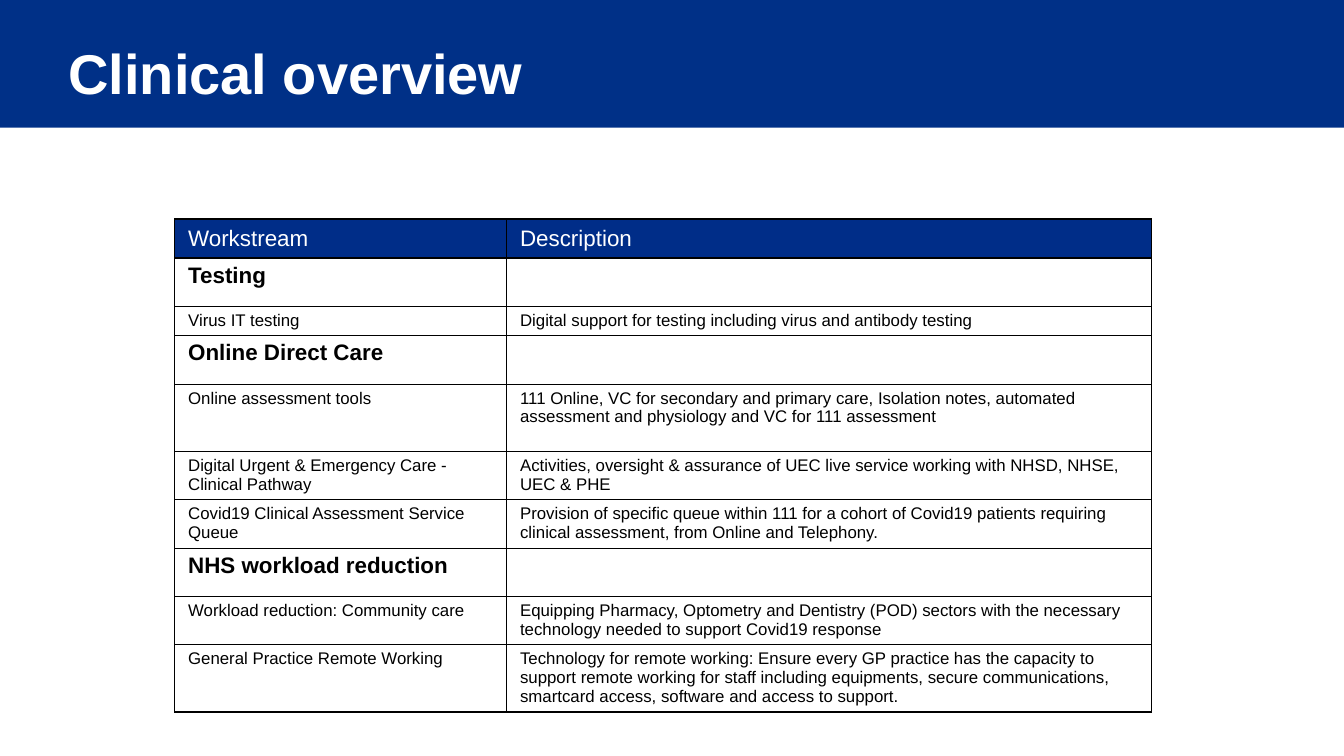
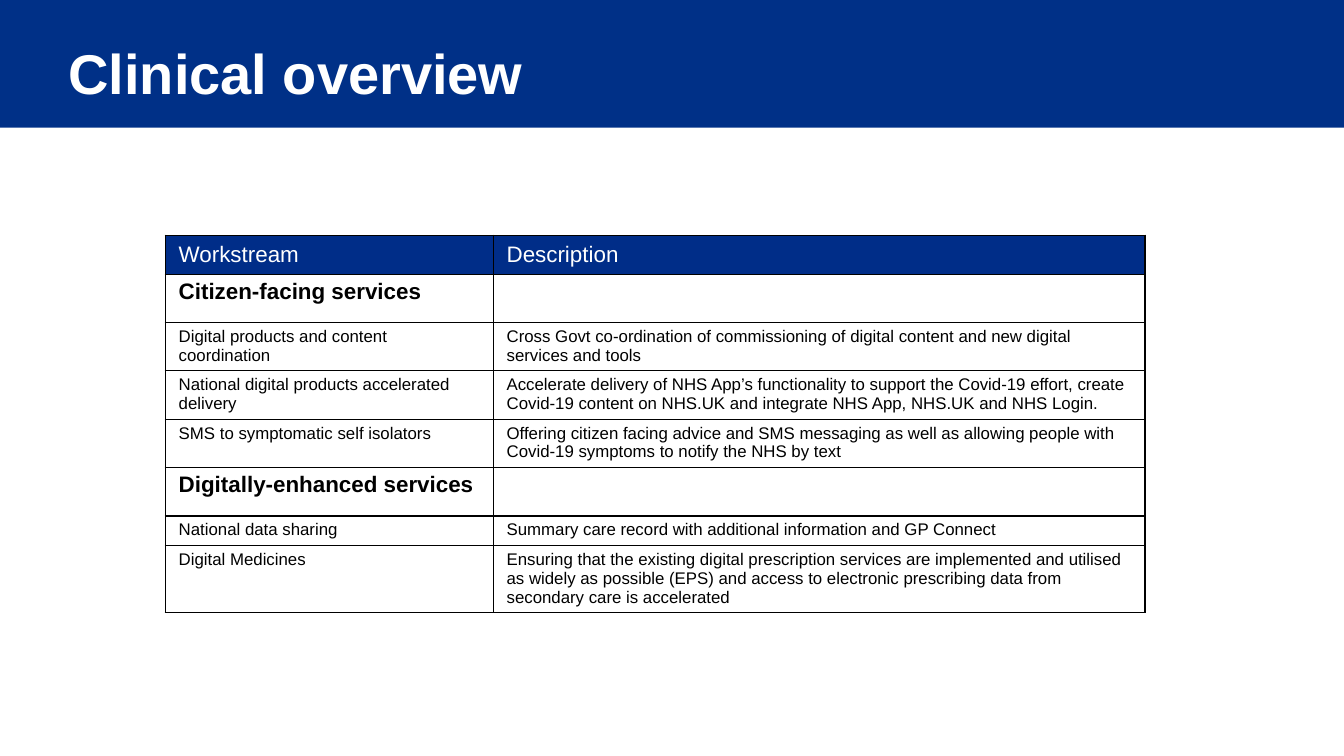
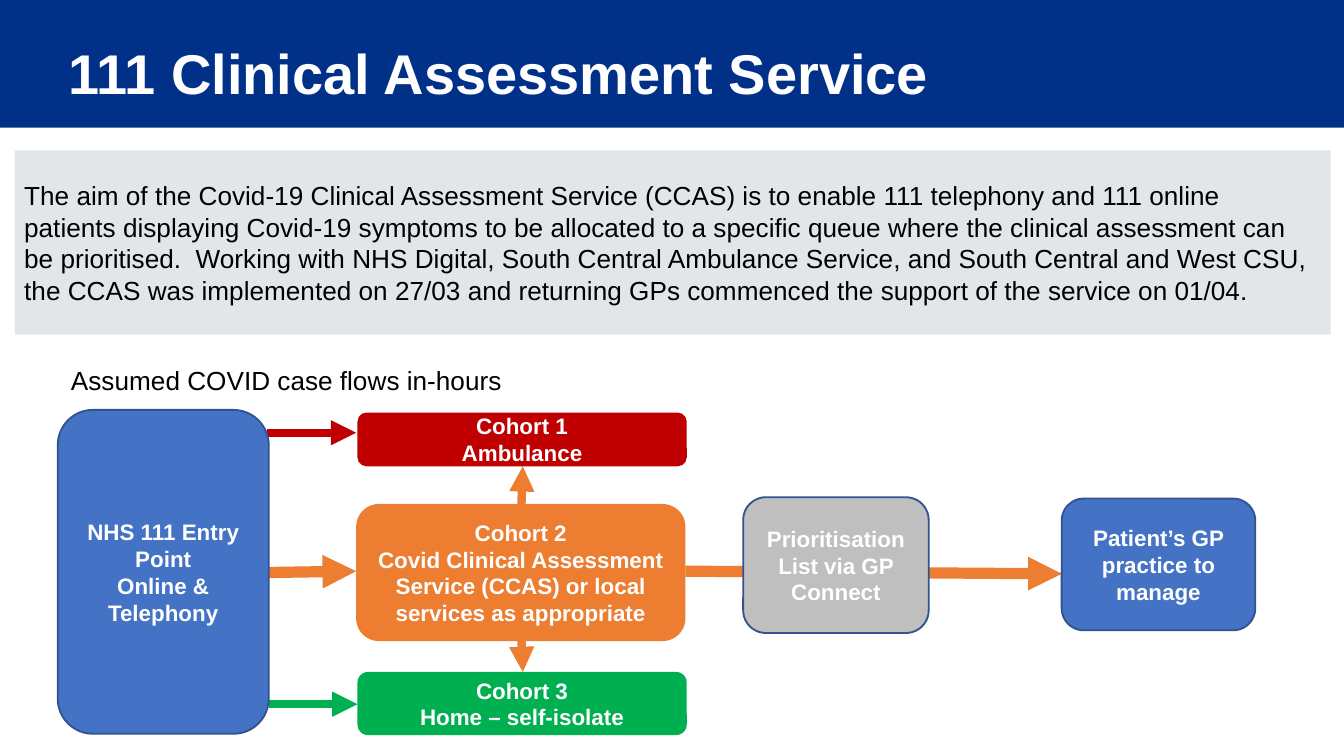
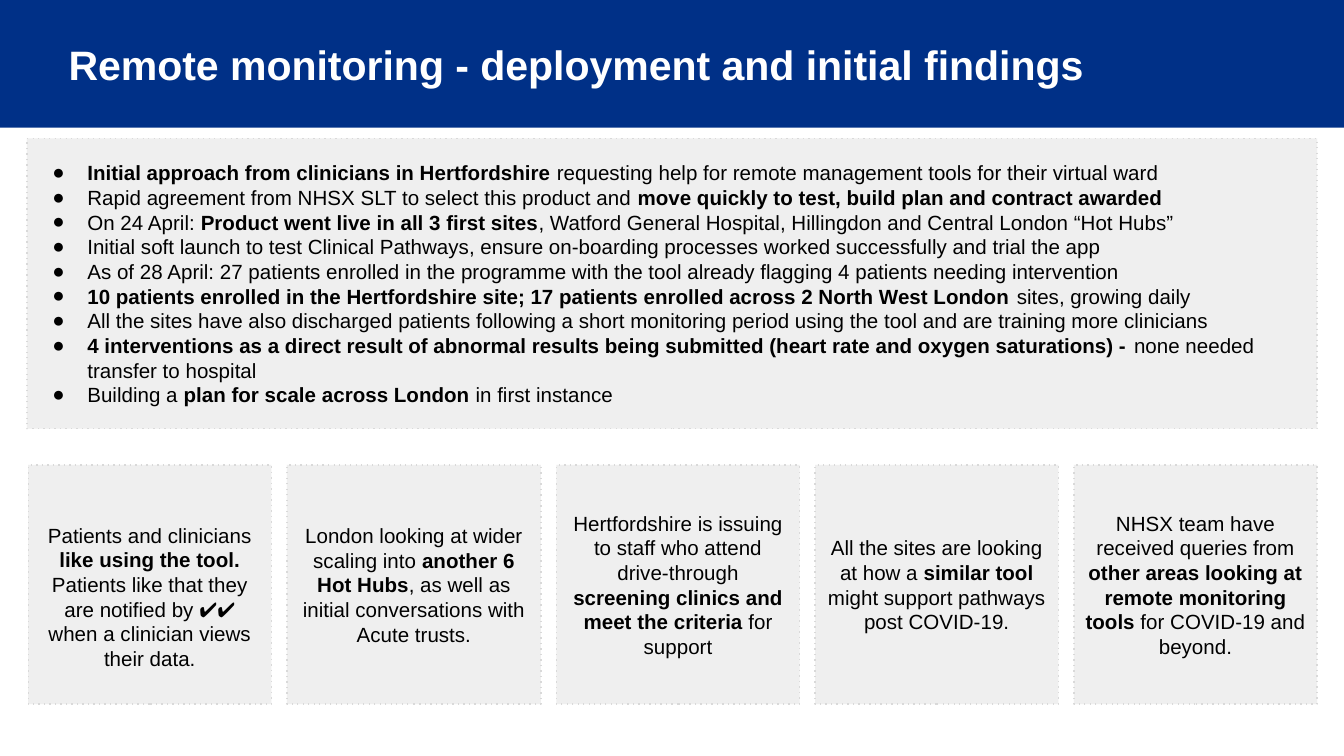
from lxml.etree import SubElement
from pptx import Presentation
from pptx.dml.color import RGBColor
from pptx.enum.shapes import MSO_CONNECTOR, MSO_SHAPE
from pptx.enum.text import MSO_ANCHOR, MSO_AUTO_SIZE, PP_ALIGN
from pptx.oxml import parse_xml
from pptx.oxml.ns import nsdecls, qn
from pptx.util import Inches, Pt

FONT = "Arial"
COLORS = {
    "band": "003087", "header": "002D88", "white": "FFFFFF", "black": "000000",
    "aim": "E3E6E8", "card": "EFEFEF", "dots": "D9D9D9",
    "blue": "4472C4", "outline": "31538F", "red": "C00000",
    "green": "00B050", "orange": "ED7D31", "grey": "BFBFBF",
}
RGB = {name: RGBColor.from_string(value) for name, value in COLORS.items()}


def write(paragraph, text, size, color="black", bold=False):
    """Add text to a paragraph; parts between asterisks are bold."""
    for i, part in enumerate(text.split("*")):
        if part:
            run = paragraph.add_run()
            run.text = part
            look = {"name": FONT, "size": Pt(size), "bold": bold or i % 2 == 1}
            for name, value in look.items():
                setattr(run.font, name, value)
            run.font.color.rgb = RGB[color]


def fill_box(shape, lines, size, fill=None, line=None, color="black", bold=False,
             align=PP_ALIGN.LEFT, anchor=MSO_ANCHOR.MIDDLE, inset=(0.07, 0.07)):
    """Give a shape its fill, outline and paragraphs; inset is (side, top and bottom)."""
    shape.shadow.inherit = False
    if fill:
        shape.fill.solid()
        shape.fill.fore_color.rgb = RGB[fill]
    if line:
        shape.line.color.rgb = RGB[line]
    else:
        shape.line.fill.background()
    side, end = map(Inches, inset)
    frame_format = {
        "word_wrap": True, "auto_size": MSO_AUTO_SIZE.NONE, "vertical_anchor": anchor,
        "margin_left": side, "margin_right": side, "margin_top": end, "margin_bottom": end,
    }
    for name, value in frame_format.items():
        setattr(shape.text_frame, name, value)
    for i, text in enumerate(lines):
        paragraph = shape.text_frame.add_paragraph() if i else shape.text_frame.paragraphs[0]
        paragraph.alignment = align
        paragraph.space_before = Pt(0)
        write(paragraph, text, size, color, bold)


prs = Presentation()
prs.slide_width = Inches(10)
prs.slide_height = prs.slide_width * 9 // 16

# Shared look: blue page, white panel, title in the blue band
master = prs.slide_master
master.background.fill.solid()
master.background.fill.fore_color.rgb = RGB["band"]
master_title = master.placeholders[0]
title_place = {"left": 0.51, "top": 0.29, "width": 8.35, "height": 0.58}
for name, value in title_place.items():
    setattr(master_title, name, Inches(value))
title_frame = {
    "vertical_anchor": MSO_ANCHOR.TOP, "auto_size": MSO_AUTO_SIZE.NONE,
    "margin_left": 0, "margin_right": 0, "margin_top": 0, "margin_bottom": 0,
}
for name, value in title_frame.items():
    setattr(master_title.text_frame, name, value)

TITLE_ONLY, TITLE_AND_BODY = prs.slide_layouts[5], prs.slide_layouts[1]
TITLES = [
    ("Clinical overview", 30, TITLE_ONLY),
    ("Clinical overview", 30, TITLE_ONLY),
    ("111 Clinical Assessment Service", 30, TITLE_ONLY),
    ("Remote monitoring - deployment and initial findings", 22, TITLE_AND_BODY),
]
slides = []
for text, size, layout in TITLES:
    slide = prs.slides.add_slide(layout)
    heading = slide.shapes.title.text_frame.paragraphs[0]
    heading.alignment = PP_ALIGN.LEFT
    write(heading, text, size, "white", bold=True)
    slides.append(slide)

panel = slides[0].shapes.add_shape(
    MSO_SHAPE.RECTANGLE, Inches(-0.01), Inches(0.95), Inches(10.01), Inches(4.77))
fill_box(panel, [], 12, "white")
master.shapes.element.insert(2, panel.element)

# Slides 1 and 2: workstream tables; a row without description opens a section
HEADER = ("Workstream", "Description", 0.29)
WORKSTREAMS = [
    (1.3, 1.63, (2.47, 4.8), [
        HEADER,
        ("Testing", "", 0.36),
        ("Virus IT testing",
         "Digital support for testing including virus and antibody testing", 0.22),
        ("Online Direct Care", "", 0.36),
        ("Online assessment tools",
         "111 Online, VC for secondary and primary care, Isolation notes, automated "
         "assessment and physiology and VC for 111 assessment", 0.5),
        ("Digital Urgent & Emergency Care - Clinical Pathway",
         "Activities, oversight & assurance of UEC live service working with NHSD, NHSE, "
         "UEC & PHE", 0.36),
        ("Covid19 Clinical Assessment Service Queue",
         "Provision of specific queue within 111 for a cohort of Covid19 patients requiring "
         "clinical assessment, from Online and Telephony.", 0.36),
        ("NHS workload reduction", "", 0.36),
        ("Workload reduction: Community care",
         "Equipping Pharmacy, Optometry and Dentistry (POD) sectors with the necessary "
         "technology needed to support Covid19 response", 0.36),
        ("General Practice Remote Working",
         "Technology for remote working: Ensure every GP practice has the capacity to "
         "support remote working for staff including equipments, secure communications, "
         "smartcard access, software and access to support.", 0.5),
    ]),
    (1.23, 1.75, (2.44, 4.85), [
        HEADER,
        ("Citizen-facing services", "", 0.36),
        ("Digital products and content coordination",
         "Cross Govt co-ordination of commissioning of digital content and new digital "
         "services and tools", 0.36),
        ("National digital products accelerated delivery",
         "Accelerate delivery of NHS App’s functionality to support the Covid-19 effort, "
         "create Covid-19 content on NHS.UK and integrate NHS App, NHS.UK and NHS Login.", 0.36),
        ("SMS to symptomatic self isolators",
         "Offering citizen facing advice and SMS messaging as well as allowing people with "
         "Covid-19 symptoms to notify the NHS by text", 0.36),
        ("Digitally-enhanced services", "", 0.36),
        ("National data sharing",
         "Summary care record with additional information and GP Connect", 0.22),
        ("Digital Medicines",
         "Ensuring that the existing digital prescription services are implemented and "
         "utilised as widely as possible (EPS) and access to electronic prescribing data "
         "from secondary care is accelerated", 0.5),
    ]),
]
for slide, (left, top, widths, rows) in zip(slides, WORKSTREAMS):
    height = sum(row[2] for row in rows)
    table = slide.shapes.add_table(
        len(rows), 2, Inches(left), Inches(top), Inches(sum(widths)), Inches(height)).table
    for column, width in zip(table.columns, widths):
        column.width = Inches(width)
    for r, (workstream, description, row_height) in enumerate(rows):
        table.rows[r].height = Inches(row_height)
        is_header, is_section = r == 0, not description
        end = Inches(0.05 if is_header else 0.035)
        for c, text in enumerate((workstream, description)):
            cell = table.cell(r, c)
            margins = {"margin_left": Inches(0.1), "margin_right": Inches(0.1),
                       "margin_top": end, "margin_bottom": end}
            for name, value in margins.items():
                setattr(cell, name, value)
            for side in ("L", "R", "T", "B"):
                cell._tc.get_or_add_tcPr().append(parse_xml(
                    f'<a:ln{side} {nsdecls("a")} w="9525"><a:solidFill>'
                    f'<a:srgbClr val="{COLORS["black"]}"/></a:solidFill></a:ln{side}>'))
            cell.fill.solid()
            cell.fill.fore_color.rgb = RGB["header" if is_header else "white"]
            paragraph = cell.text_frame.paragraphs[0]
            write(paragraph, text, 12 if is_header or is_section else 9,
                  "white" if is_header else "black", bold=is_section)
            if not text:
                SubElement(paragraph._p, qn("a:endParaRPr"), sz="1200")

# Slide 3: aim of the service and the case flow
service = slides[2].shapes
aim = service.add_shape(
    MSO_SHAPE.RECTANGLE, Inches(0.11), Inches(1.12), Inches(9.79), Inches(1.37))
fill_box(aim, [
    "The aim of the Covid-19 Clinical Assessment Service (CCAS) is to enable 111 telephony "
    "and 111 online patients displaying Covid-19 symptoms to be allocated to a specific queue "
    "where the clinical assessment can be prioritised.  Working with NHS Digital, South Central "
    "Ambulance Service, and South Central and West CSU, the CCAS was implemented on 27/03 and "
    "returning GPs commenced the support of the service on 01/04."],
    14, "aim", inset=(0.07, 0.04))
aim.text_frame.margin_right = Inches(0.12)

flow = service.add_group_shape().shapes
ARROWS = [
    ((1.99, 3.22), (2.65, 3.22), "red", 4.5),
    ((2, 5.24), (2.66, 5.24), "green", 4.5),
    ((1.99, 4.26), (2.65, 4.25), "orange", 6),
    ((5.1, 4.25), (7.9, 4.27), "orange", 6),
    ((3.88, 4.76), (3.89, 5), "orange", 4.5),
    ((3.88, 3.75), (3.89, 3.47), "orange", 4.5),
]
for start, finish, color, width in ARROWS:
    arrow = flow.add_connector(MSO_CONNECTOR.STRAIGHT, *map(Inches, start + finish))
    arrow.line.color.rgb = RGB[color]
    arrow.line.width = Pt(width)
    SubElement(arrow.line._get_or_add_ln(), qn("a:tailEnd"), type="triangle")
    SubElement(arrow.element.spPr, qn("a:effectLst"))

STEPS = [
    ((0.43, 3.05, 1.57, 2.41), "blue", "outline",
     ["NHS 111 Entry Point", "Online &", "Telephony"]),
    ((2.66, 3.07, 2.45, 0.4), "red", None, ["Cohort 1", "Ambulance"]),
    ((2.65, 3.75, 2.45, 1.02), "orange", None,
     ["Cohort 2", "Covid Clinical Assessment Service (CCAS) or local services as appropriate"]),
    ((2.66, 5, 2.45, 0.47), "green", None, ["Cohort 3", "Home – self-isolate"]),
    ((5.53, 3.7, 1.38, 1.01), "grey", "outline", ["Prioritisation List via GP Connect"]),
    ((7.9, 3.71, 1.44, 0.98), "blue", "outline", ["Patient’s GP practice to manage"]),
]
for place, fill, line, lines in STEPS:
    step = flow.add_shape(MSO_SHAPE.ROUNDED_RECTANGLE, *map(Inches, place))
    fill_box(step, lines, 12, fill, line, "white", True, PP_ALIGN.CENTER, inset=(0.1, 0.05))
    if line:
        step.line.width = Pt(1)

flow_caption = service.add_textbox(Inches(0.43), Inches(2.61), Inches(5.43), Inches(0.27))
fill_box(flow_caption, ["Assumed COVID case flows in-hours"], 14,
         anchor=MSO_ANCHOR.TOP, inset=(0.1, 0.1))

# Slide 4: deployment story and findings
monitoring = slides[3]
deployment = monitoring.placeholders[1]
deployment_place = {"left": 0.2, "top": 1.03, "width": 9.6, "height": 2.16}
for name, value in deployment_place.items():
    setattr(deployment, name, Inches(value))
fill_box(deployment, [
    "*Initial approach from clinicians in Hertfordshire *requesting help for remote "
    "management tools for their virtual ward",
    "Rapid agreement from NHSX SLT to select this product and *move quickly to test, build "
    "plan and contract awarded*",
    "On 24 April: *Product went live in all 3 first sites*, Watford General Hospital, "
    "Hillingdon and Central London “Hot Hubs”",
    "Initial soft launch to test Clinical Pathways, ensure on-boarding processes worked "
    "successfully and trial the app",
    "As of 28 April: 27 patients enrolled in the programme with the tool already flagging "
    "4 patients needing intervention",
    "*10 patients enrolled in the Hertfordshire site; 17 patients enrolled across 2 North "
    "West London* sites, growing daily",
    "All the sites have also discharged patients following a short monitoring period using "
    "the tool and are training more clinicians",
    "*4 interventions as a direct result of abnormal results being submitted (heart rate and "
    "oxygen saturations) - *none needed transfer to hospital",
    "Building a *plan for scale across London* in first instance",
], 11, "card", "dots")
for point in deployment.text_frame.paragraphs:
    properties = point._p.get_or_add_pPr()
    properties.set("marL", str(Inches(0.38)))
    properties.set("indent", str(Inches(-0.26)))
    bullet_color = SubElement(properties, qn("a:buClr"))
    SubElement(bullet_color, qn("a:srgbClr"), val=COLORS["black"])
    SubElement(properties, qn("a:buFont"), typeface=FONT)
    SubElement(properties, qn("a:buChar"), char="●")

FINDINGS = [
    (1.81, "Patients and clinicians *like using the tool.* Patients like that they are "
           "notified by ✔️✔️ when a clinician views their data."),
    (1.89, "London looking at wider scaling into *another 6 Hot Hubs*, as well as initial "
           "conversations with Acute trusts."),
    (1.81, "Hertfordshire is issuing to staff who attend drive-through *screening clinics "
           "and meet the criteria* for support"),
    (1.81, "All the sites are looking at how a *similar tool* might support pathways post "
           "COVID-19."),
    (1.81, "NHSX team have received queries from *other areas looking at remote monitoring "
           "tools* for COVID-19 and beyond."),
]
left, right_edge = 0.21, 9.8
card_gap = (right_edge - left - sum(width for width, _ in FINDINGS)) / (len(FINDINGS) - 1)
cards = []
for width, finding in FINDINGS:
    card = monitoring.shapes.add_shape(
        MSO_SHAPE.RECTANGLE, Inches(left), Inches(3.46), Inches(width), Inches(1.78))
    fill_box(card, [finding], 11, "card", "dots", align=PP_ALIGN.CENTER)
    cards.append(card)
    left += width + card_gap
cards[0].text_frame.margin_top = Inches(0.25)
for dotted in [deployment, *cards]:
    dotted.line.width = Pt(0.75)
    SubElement(dotted.line._get_or_add_ln(), qn("a:prstDash"), val="dot")

prs.save("out.pptx")
